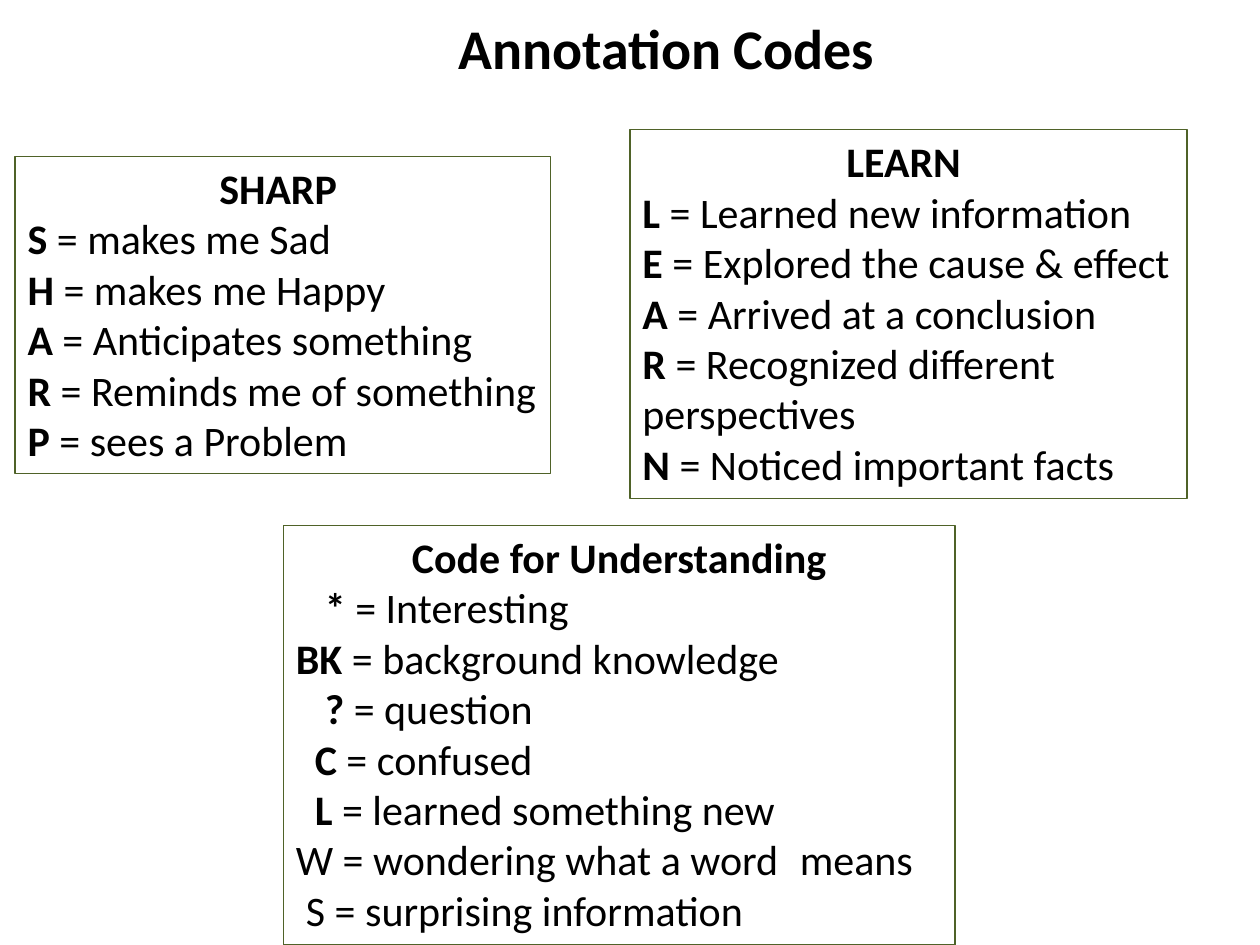
from dataclasses import dataclass

from pptx import Presentation
from pptx.dml.color import RGBColor
from pptx.enum import text
from pptx.util import Inches, Pt


@dataclass(frozen=True)
class Theme:
    font: str = "Calibri"
    ink: RGBColor = RGBColor(0x00, 0x00, 0x00)
    border: RGBColor = RGBColor(0x4F, 0x62, 0x28)
    title_size: int = 32
    text_size: int = 24
    border_width: float = 0.75


@dataclass(frozen=True)
class Code:
    symbol: str
    meaning: str
    indent: float = 0
    bold: bool = True


@dataclass(frozen=True)
class CodeBox:
    heading: str
    left: float
    top: float
    width: float
    height: float
    codes: tuple[Code, ...]


THEME = Theme()

CODE_BOXES = (
    CodeBox("SHARP ", 0.12, 1.24, 4.25, 2.52, (
        Code("S", "makes me Sad"),
        Code("H", "makes me Happy"),
        Code("A", "Anticipates something"),
        Code("R", "Reminds me of something"),
        Code("P", "sees a Problem"),
    )),
    CodeBox("LEARN ", 5, 1.03, 4.42, 2.93, (
        Code("L", "Learned new information"),
        Code("E", "Explored the cause & effect"),
        Code("A", "Arrived at a conclusion"),
        Code("R", "Recognized different \tperspectives"),
        Code("N", "Noticed important facts"),
    )),
    CodeBox("Code for Understanding", 2.25, 4.17, 5.33, 3.33, (
        Code("*", "Interesting", indent=0.23),
        Code("BK", "background knowledge"),
        Code("?", "question", indent=0.23),
        Code("C", "confused", indent=0.15),
        Code("L", "learned something new", indent=0.15),
        Code("W", "wondering what a word \tmeans", bold=False),
        Code("S", "surprising information", indent=0.08, bold=False),
    )),
)


def add_span(para, words: str, size: int, bold: bool) -> None:
    span = para.add_run()
    span.text = words
    span.font.name = THEME.font
    span.font.size = Pt(size)
    span.font.bold = bold
    span.font.color.rgb = THEME.ink


def add_heading(frame, words: str, size: int) -> None:
    frame.word_wrap = True
    frame.auto_size = text.MSO_AUTO_SIZE.SHAPE_TO_FIT_TEXT
    para = frame.paragraphs[0]
    para.alignment = text.PP_ALIGN.CENTER
    add_span(para, words, size, True)


def add_code(frame, code: Code) -> None:
    para = frame.add_paragraph()
    para.alignment = text.PP_ALIGN.LEFT
    if code.indent:
        # python-pptx has no paragraph indent property
        para._p.get_or_add_pPr().set("marL", str(Inches(code.indent)))
    add_span(para, code.symbol, THEME.text_size, code.bold)
    add_span(para, f" = {code.meaning}", THEME.text_size, False)


def add_code_box(page, spec_box: CodeBox) -> None:
    box = page.shapes.add_textbox(
        Inches(spec_box.left), Inches(spec_box.top),
        Inches(spec_box.width), Inches(spec_box.height))
    box.line.color.rgb = THEME.border
    box.line.width = Pt(THEME.border_width)
    add_heading(box.text_frame, spec_box.heading, THEME.text_size)
    for code in spec_box.codes:
        add_code(box.text_frame, code)


def main() -> None:
    deck = Presentation()
    deck.slide_width, deck.slide_height = Inches(10), Inches(7.5)
    page = deck.slides.add_slide(deck.slide_layouts[5])

    # Title
    title = page.shapes.title
    title.left, title.top = Inches(2.25), Inches(0.05)
    title.width, title.height = Inches(6.08), Inches(0.64)
    add_heading(title.text_frame, "Annotation Codes", THEME.title_size)

    # Bordered code lists
    for code_box in CODE_BOXES:
        add_code_box(page, code_box)

    deck.save("out.pptx")


if __name__ == "__main__":
    main()
